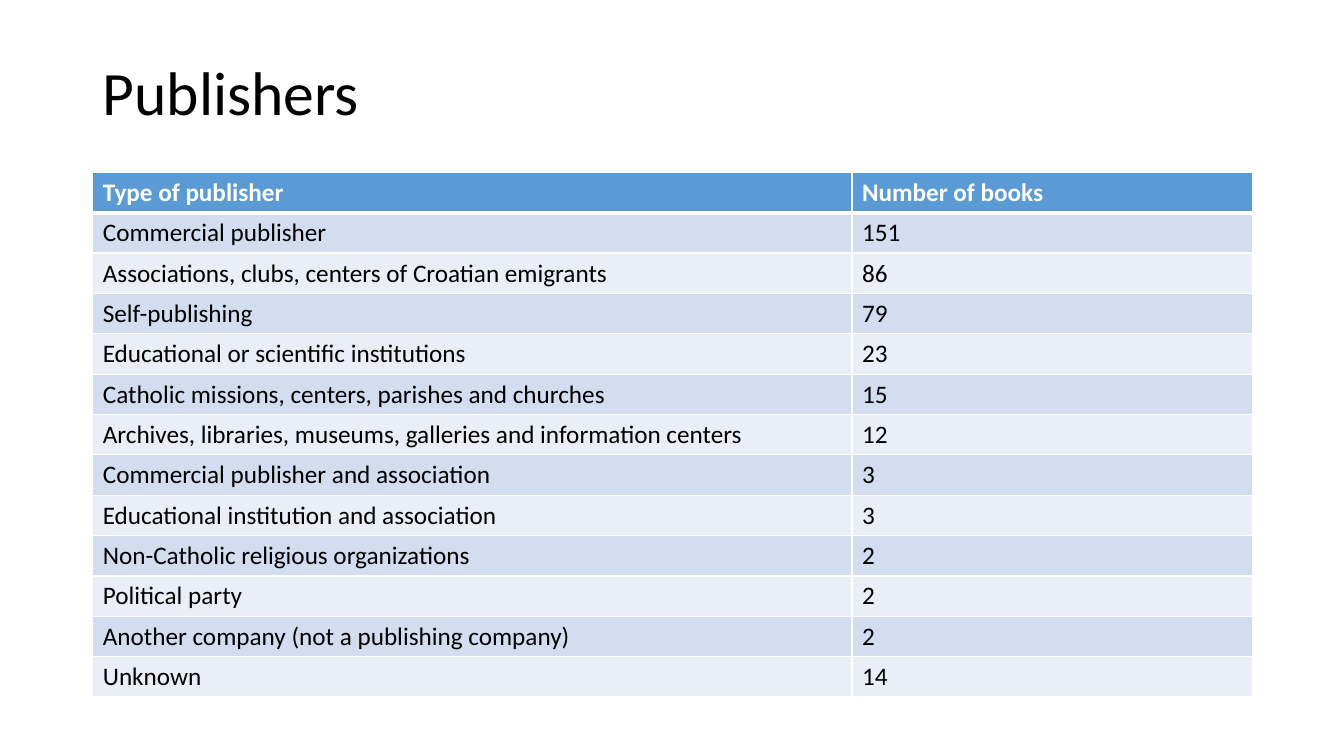
from lxml.etree import SubElement
from pptx import Presentation
from pptx.dml.color import RGBColor
from pptx.enum.text import MSO_ANCHOR
from pptx.oxml.ns import qn
from pptx.util import Inches, Pt

BLACK = RGBColor(0x00, 0x00, 0x00)
WHITE = RGBColor(0xFF, 0xFF, 0xFF)
HEADER_BLUE = RGBColor(0x5B, 0x9B, 0xD5)
BAND_DARK = RGBColor(0xD2, 0xDE, 0xEF)
BAND_LIGHT = RGBColor(0xEA, 0xEF, 0xF7)

PUBLISHERS = [
    ("Type of publisher", "Number of books"),
    ("Commercial publisher", "151"),
    ("Associations, clubs, centers of Croatian emigrants", "86"),
    ("Self-publishing", "79"),
    ("Educational or scientific institutions", "23"),
    ("Catholic missions, centers, parishes and churches", "15"),
    ("Archives, libraries, museums, galleries and information centers", "12"),
    ("Commercial publisher and association", "3"),
    ("Educational institution and association", "3"),
    ("Non-Catholic religious organizations", "2"),
    ("Political party", "2"),
    ("Another company (not a publishing company)", "2"),
    ("Unknown", "14"),
]


class SlideBuilder:
    font_name = "Calibri"
    left = 0.92
    width = 11.5

    def __init__(self, slide):
        self.slide = slide

    def style(self, paragraph, size, color, bold=False):
        for run in paragraph.runs:
            run.font.name = self.font_name
            run.font.size = Pt(size)
            run.font.bold = bold
            run.font.color.rgb = color

    def title(self, text, top, height):
        heading = self.slide.shapes.add_textbox(
            Inches(self.left), Inches(top), Inches(self.width), Inches(height)
        )
        frame = heading.text_frame
        frame.word_wrap = True
        frame.vertical_anchor = MSO_ANCHOR.MIDDLE
        frame.text = text
        frame.paragraphs[0].line_spacing = 0.9
        self.style(frame.paragraphs[0], 44, BLACK)

    def borders(self, cell, widths):
        properties = cell._tc.get_or_add_tcPr()
        for side, width in zip("LRTB", widths):
            line = SubElement(properties, qn(f"a:ln{side}"), w=str(Pt(width)))
            fill = SubElement(line, qn("a:solidFill"))
            SubElement(fill, qn("a:srgbClr"), val=str(WHITE))

    def table(self, rows, top, height, column_widths):
        grid = self.slide.shapes.add_table(
            len(rows), len(column_widths),
            Inches(self.left), Inches(top), Inches(self.width), Inches(height),
        ).table
        for column, width in zip(grid.columns, column_widths):
            column.width = Inches(width)
        for row_index, values in enumerate(rows):
            header = row_index == 0
            band = BAND_DARK if row_index % 2 else BAND_LIGHT
            widths = (1, 1, 3 if row_index == 1 else 1, 3 if header else 1)
            for column_index, value in enumerate(values):
                cell = grid.cell(row_index, column_index)
                self.borders(cell, widths)
                cell.fill.solid()
                cell.fill.fore_color.rgb = HEADER_BLUE if header else band
                cell.text_frame.text = value
                self.style(cell.text_frame.paragraphs[0], 18,
                           WHITE if header else BLACK, header)


def main():
    deck = Presentation()
    deck.slide_width = Inches(13.33)
    deck.slide_height = Inches(7.5)
    builder = SlideBuilder(deck.slides.add_slide(deck.slide_layouts[6]))
    builder.title("Publishers", 0.4, 1.1)
    builder.table(PUBLISHERS, 1.71, 5.2, (7.53, 3.97))
    deck.save("out.pptx")


if __name__ == "__main__":
    main()
